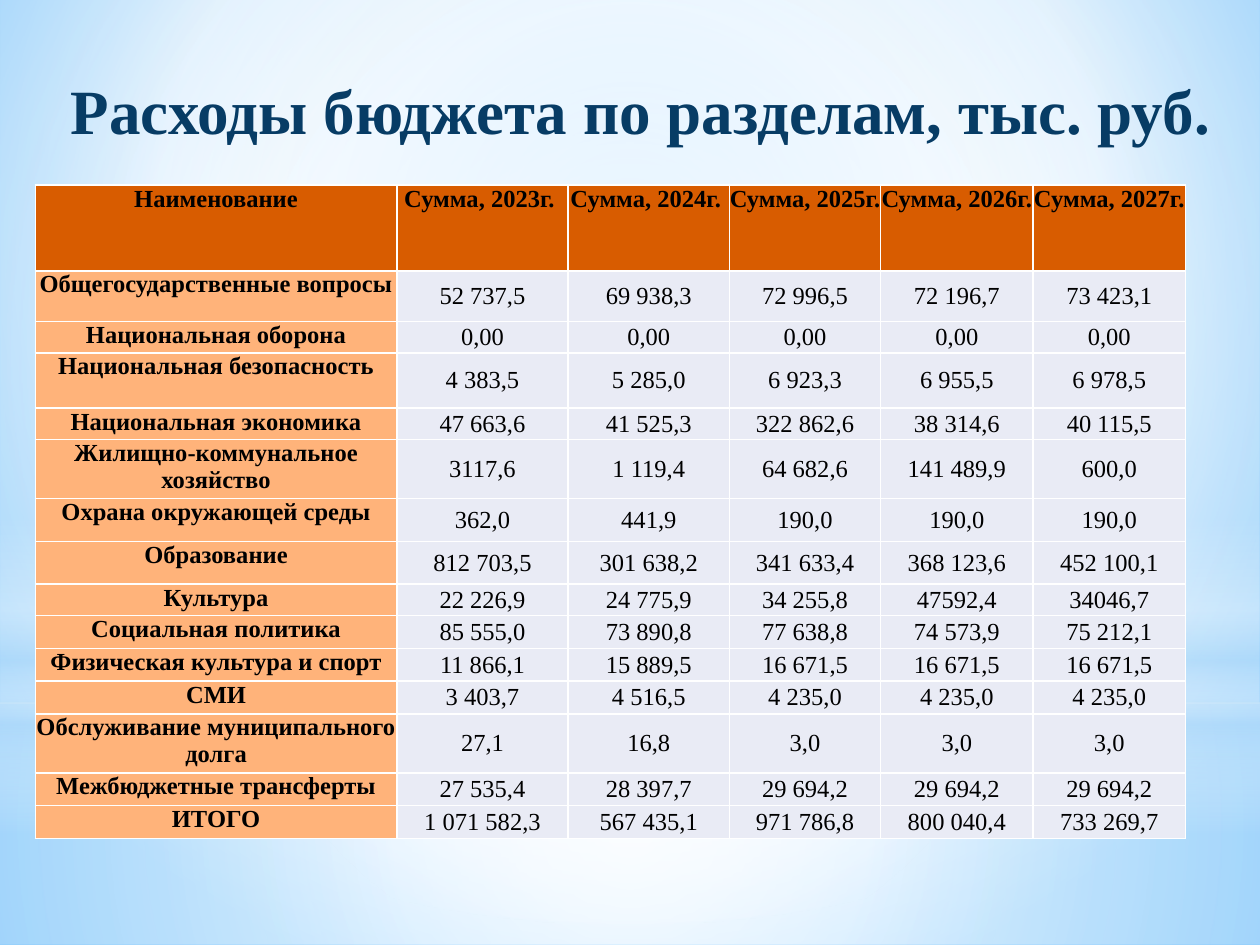
import pptx
import pptx.dml.color
import pptx.enum.shapes
import pptx.enum.text
import pptx.oxml
import pptx.oxml.ns
import pptx.util
from dataclasses import dataclass

Inches = pptx.util.Inches
Pt = pptx.util.Pt
Shape = pptx.enum.shapes.MSO_SHAPE
Anchor = pptx.enum.text.MSO_ANCHOR
CENTER = pptx.enum.text.PP_ALIGN.CENTER


@dataclass(frozen=True)
class Theme:
    font: str = "Times New Roman"
    title_size: int = 36
    table_size: int = 14
    title: str = "073C65"
    text: str = "000000"
    header_fill: str = "D85C00"
    name_fill: str = "FFB37A"
    value_fill: str = "E9EBF5"
    border: str = "FFFFFF"
    white: str = "FFFFFF"
    haze: str = "B4DCFA"
    sky: str = "9ED5FF"
    deep_sky: str = "5BB9FF"


THEME = Theme()
MIDDLE = (50, 50, 50, 50)
BACKGROUND_STOPS = [(0, THEME.sky, 100), (60, THEME.white, 100), (100, THEME.deep_sky, 100)]

# Each glow: preset, place, (position, colour, opacity) stops, centre of a radial gradient
GLOWS = [
    (Shape.RECTANGLE, (0, 5.58, 10, 1.92),
     [(0, THEME.white, 91), (37, THEME.white, 76), (100, THEME.haze, 79)], MIDDLE),
    (Shape.RECTANGLE, (0, 0, 10, 5.58),
     [(0, THEME.white, 89), (48, THEME.white, 62), (100, THEME.haze, 79)], MIDDLE),
    (Shape.RECTANGLE, (0, 4.12, 10, 2.5),
     [(0, THEME.white, 0), (29, THEME.white, 30), (45, THEME.haze, 40),
      (55, THEME.white, 26), (65, THEME.haze, 60), (100, THEME.white, 0)], None),
    (Shape.OVAL, (0, 1.75, 10, 5.58),
     [(0, THEME.white, 100), (56, THEME.white, 0)], MIDDLE),
]

COLUMN_WIDTHS = [2.87, 1.36, 1.28, 1.2, 1.21, 1.21]
HEADER = (0.68, "Наименование", "Сумма, 2023г. ", "Сумма, 2024г. ",
          "Сумма, 2025г.", "Сумма, 2026г.", "Сумма, 2027г.")
# Row height, section, sums for 2023 to 2027
SECTIONS = [
    (0.4, "Общегосударственные вопросы", "52 737,5", "69 938,3", "72 996,5", "72 196,7", "73 423,1"),
    (0.25, "Национальная оборона", "0,00", "0,00", "0,00", "0,00", "0,00"),
    (0.44, "Национальная безопасность", "4 383,5", "5 285,0", "6 923,3", "6 955,5", "6 978,5"),
    (0.25, "Национальная экономика", "47 663,6", "41 525,3", "322 862,6", "38 314,6", "40 115,5"),
    (0.37, "Жилищно-коммунальное хозяйство", "3117,6", "1 119,4", "64 682,6", "141 489,9", "600,0"),
    (0.34, "Охрана окружающей среды", "362,0", "441,9", "190,0", "190,0", "190,0"),
    (0.34, "Образование", "812 703,5", "301 638,2", "341 633,4", "368 123,6", "452 100,1"),
    (0.25, "Культура", "22 226,9", "24 775,9", "34 255,8", "47592,4", "34046,7"),
    (0.26, "Социальная политика", "85 555,0", "73 890,8", "77 638,8", "74 573,9", "75 212,1"),
    (0.26, "Физическая культура и спорт", "11 866,1", "15 889,5", "16 671,5", "16 671,5", "16 671,5"),
    (0.26, "СМИ", "3 403,7", "4 516,5", "4 235,0", "4 235,0", "4 235,0"),
    (0.26, "Обслуживание муниципального долга", "27,1", "16,8", "3,0", "3,0", "3,0"),
    (0.26, "Межбюджетные трансферты", "27 535,4", "28 397,7", "29 694,2", "29 694,2", "29 694,2"),
    (0.26, "ИТОГО", "1 071 582,3", "567 435,1", "971 786,8", "800 040,4", "733 269,7"),
]


def color(value):
    return pptx.dml.color.RGBColor.from_string(value)


def apply_gradient(element, stops, center):
    """Replace the solid fill inside element by a radial gradient, or a vertical one without center."""
    stop_xml = "".join(
        f'<a:gs pos="{position * 1000}"><a:srgbClr val="{value}">'
        f'<a:alpha val="{opacity * 1000}"/></a:srgbClr></a:gs>'
        for position, value, opacity in stops)
    direction = '<a:lin ang="5400000" scaled="0"/>'
    if center:
        sides = " ".join(f'{side}="{share * 1000}"' for side, share in zip("ltrb", center))
        direction = f'<a:path path="circle"><a:fillToRect {sides}/></a:path>'
    gradient = pptx.oxml.parse_xml(
        f'<a:gradFill {pptx.oxml.ns.nsdecls("a")} rotWithShape="1">'
        f'<a:gsLst>{stop_xml}</a:gsLst>{direction}</a:gradFill>')
    solid = element.find(".//" + pptx.oxml.ns.qn("a:solidFill"))
    solid.getparent().replace(solid, gradient)


def paint_background(page):
    page.background.fill.solid()
    page.background.fill.fore_color.rgb = color(THEME.sky)
    apply_gradient(page.element, BACKGROUND_STOPS, (20, 10, 20, 60))


def add_glow(page, preset, place, stops, center):
    glow = page.shapes.add_shape(preset, *map(Inches, place))
    glow.shadow.inherit = False
    glow.line.fill.background()
    glow.fill.solid()
    glow.fill.fore_color.rgb = color(THEME.white)
    apply_gradient(glow.element, stops, center)


def write_text(frame, text, size, value, bold):
    para = frame.paragraphs[0]
    para.alignment = CENTER
    span = para.add_run()
    span.text = text
    formats = {"name": THEME.font, "size": Pt(size), "bold": bold}
    for name, setting in formats.items():
        setattr(span.font, name, setting)
    span.font.color.rgb = color(value)


def add_title(page, text):
    box = page.shapes.add_textbox(*map(Inches, (0.28, 0.52, 9.61, 1.34)))
    box.text_frame.word_wrap = True
    write_text(box.text_frame, text, THEME.title_size, THEME.title, True)


def add_borders(cell):
    properties = cell._tc.get_or_add_tcPr()
    for side in "LRTB":
        properties.append(pptx.oxml.parse_xml(
            f'<a:ln{side} {pptx.oxml.ns.nsdecls("a")} w="{Pt(1)}"><a:solidFill>'
            f'<a:srgbClr val="{THEME.border}"/></a:solidFill></a:ln{side}>'))


def fill_cell(cell, text, fill, bold, anchor):
    formats = {"margin_left": 0, "margin_right": 0, "margin_top": 0,
               "margin_bottom": 0, "vertical_anchor": anchor}
    for name, setting in formats.items():
        setattr(cell, name, setting)
    add_borders(cell)
    cell.fill.solid()
    cell.fill.fore_color.rgb = color(fill)
    write_text(cell.text_frame, text, THEME.table_size, THEME.text, bold)


def add_budget_table(page):
    rows = [HEADER] + SECTIONS
    height = sum(row[0] for row in rows)
    frame = page.shapes.add_table(
        len(rows), len(COLUMN_WIDTHS),
        *map(Inches, (0.28, 1.47, sum(COLUMN_WIDTHS), height)))
    table = frame.table
    table.first_row = table.horz_banding = False
    for column, width in zip(table.columns, COLUMN_WIDTHS):
        column.width = Inches(width)
    for row_index, (row_height, *texts) in enumerate(rows):
        table.rows[row_index].height = Inches(row_height)
        for column_index, text in enumerate(texts):
            if row_index == 0:
                style = (THEME.header_fill, True, Anchor.TOP)
            elif column_index == 0:
                style = (THEME.name_fill, True, Anchor.TOP)
            else:
                style = (THEME.value_fill, False, Anchor.MIDDLE)
            fill_cell(table.cell(row_index, column_index), text, *style)


def main():
    deck = pptx.Presentation()
    deck.slide_width, deck.slide_height = Inches(10), Inches(7.5)
    page = deck.slides.add_slide(deck.slide_layouts[6])
    paint_background(page)
    for glow in GLOWS:
        add_glow(page, *glow)
    add_title(page, "Расходы бюджета по разделам, тыс. руб.")
    add_budget_table(page)
    deck.save("out.pptx")


if __name__ == "__main__":
    main()
